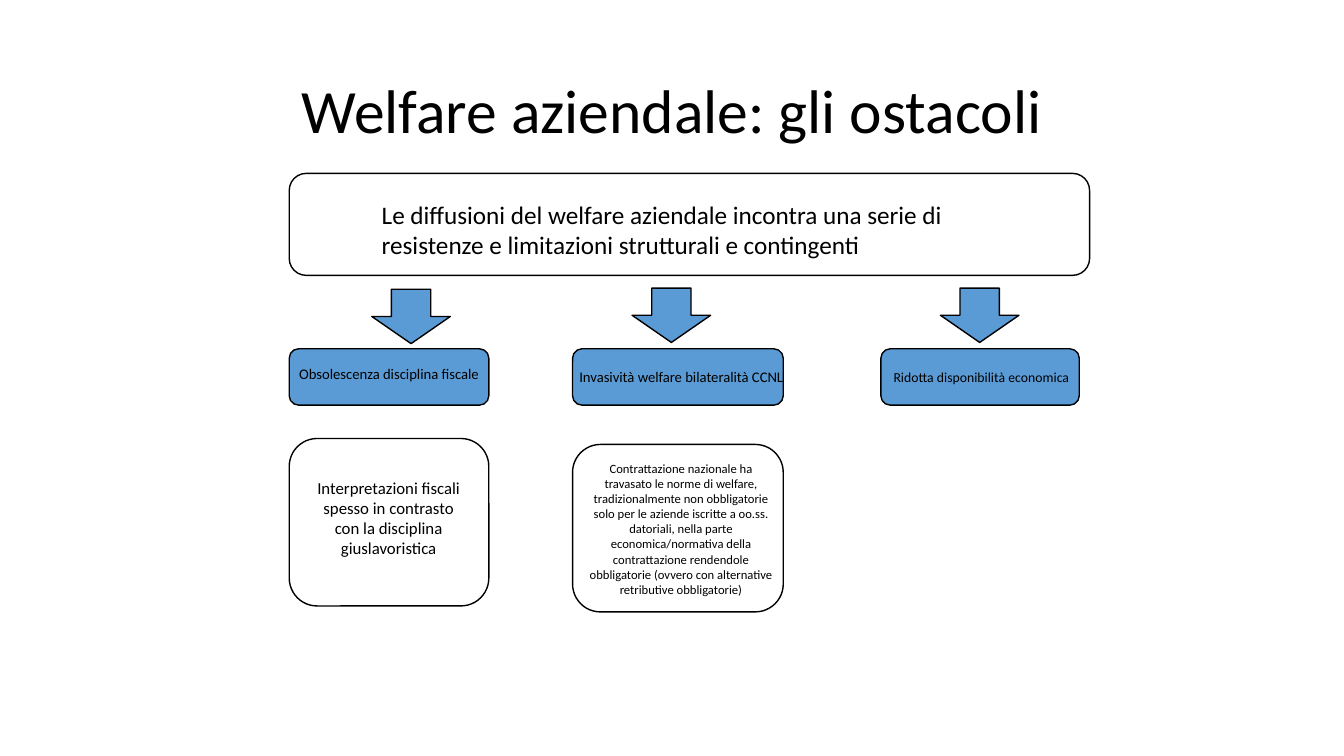
from dataclasses import dataclass

from pptx import Presentation
from pptx.dml.color import RGBColor
from pptx.enum.shapes import MSO_SHAPE
from pptx.enum.text import MSO_ANCHOR, MSO_AUTO_SIZE, PP_ALIGN
from pptx.util import Cm, Pt

# Content
TITLE = "Welfare aziendale: gli ostacoli"
INTRO = ("Le diffusioni del welfare aziendale incontra una serie di "
         "resistenze e limitazioni strutturali e contingenti")

# Obstacles: column and arrow geometry in cm; label and detail are
# (text, left, top, width, height, size), detail_top places the lower box
OBSTACLES = [
    dict(left=7.29, width=5.03, arrow_left=9.37, arrow_top=7.29, detail_top=11.05,
         label=("Obsolescenza disciplina fiscale", 7.29, 9.07, 5.13, 0.71, "label"),
         detail=("Interpretazioni fiscali spesso in contrasto con la disciplina "
                 "giuslavoristica", 7.7, 11.91, 4.19, 2.31, "detail")),
    dict(left=14.43, width=5.31, arrow_left=15.93, arrow_top=7.26, detail_top=11.2,
         label=("Invasività welfare bilateralità CCNL", 14.35, 9.14, 5.77, 0.71, "label"),
         detail=("Contrattazione nazionale ha travasato le norme di welfare, "
                 "tradizionalmente non obbligatorie solo per le aziende iscritte a "
                 "oo.ss. datoriali, nella parte economica/normativa della "
                 "contrattazione rendendole obbligatorie (ovvero con alternative "
                 "retributive obbligatorie)", 14.58, 11.48, 5.16, 3.71, "small")),
    dict(left=22.2, width=5.0, arrow_left=23.7, arrow_top=7.26,
         inner_label="Ridotta disponibilità economica"),
]

ARROW_WIDTH, ARROW_HEIGHT = 1.98, 1.37
LABEL_TOP, LABEL_HEIGHT, DETAIL_HEIGHT = 8.79, 1.42, 4.22


@dataclass(frozen=True)
class Theme:
    font = "Calibri"
    ink = RGBColor(0x00, 0x00, 0x00)
    accent = RGBColor(0x5B, 0x9B, 0xD5)
    line = Pt(1)
    sizes = {"title": 44, "intro": 18, "detail": 12, "label": 10.5,
             "inner": 9.8, "small": 9}


THEME = Theme()


def write(shape, text, size, align=PP_ALIGN.LEFT, anchor=MSO_ANCHOR.TOP, wrap=True):
    frame = shape.text_frame
    frame.text = text
    frame.word_wrap = wrap
    frame.vertical_anchor = anchor
    paragraph = frame.paragraphs[0]
    paragraph.alignment = align
    font = paragraph.runs[0].font
    font.name, font.size = THEME.font, Pt(THEME.sizes[size])
    font.color.rgb = THEME.ink
    return frame


def add_text(slide, text, left, top, width, height, size, **options):
    box = slide.shapes.add_textbox(Cm(left), Cm(top), Cm(width), Cm(height))
    frame = write(box, text, size, **options)
    frame.auto_size = MSO_AUTO_SIZE.SHAPE_TO_FIT_TEXT


def add_box(slide, kind, left, top, width, height, filled=True):
    shape = slide.shapes.add_shape(kind, Cm(left), Cm(top), Cm(width), Cm(height))
    shape.shadow.inherit = False
    shape.line.color.rgb, shape.line.width = THEME.ink, THEME.line
    if filled:
        shape.fill.solid()
        shape.fill.fore_color.rgb = THEME.accent
    else:
        shape.fill.background()
    return shape


def main():
    presentation = Presentation()
    presentation.slide_width, presentation.slide_height = Cm(33.87), Cm(19.05)
    slide = presentation.slides.add_slide(presentation.slide_layouts[6])

    # Title
    title = slide.shapes.add_textbox(Cm(2.33), Cm(1.01), Cm(29.21), Cm(3.68))
    frame = write(title, TITLE, "title", PP_ALIGN.CENTER, MSO_ANCHOR.MIDDLE)
    frame.paragraphs[0].line_spacing = 0.9

    # Introduction
    add_box(slide, MSO_SHAPE.ROUNDED_RECTANGLE, 7.29, 4.37, 20.17, 2.57, filled=False)
    add_text(slide, INTRO, 9.37, 4.9, 16.84, 1.8, "intro")

    # Obstacle columns: arrow, label and optional detail
    for obstacle in OBSTACLES:
        left, width = obstacle["left"], obstacle["width"]
        add_box(slide, MSO_SHAPE.DOWN_ARROW, obstacle["arrow_left"],
                obstacle["arrow_top"], ARROW_WIDTH, ARROW_HEIGHT)
        label_box = add_box(slide, MSO_SHAPE.ROUNDED_RECTANGLE,
                            left, LABEL_TOP, width, LABEL_HEIGHT)
        if "inner_label" in obstacle:
            write(label_box, obstacle["inner_label"], "inner",
                  anchor=MSO_ANCHOR.MIDDLE, wrap=False)
        else:
            add_text(slide, *obstacle["label"], wrap=False)
        if "detail" in obstacle:
            add_box(slide, MSO_SHAPE.ROUNDED_RECTANGLE, left, obstacle["detail_top"],
                    width, DETAIL_HEIGHT, filled=False)
            add_text(slide, *obstacle["detail"], align=PP_ALIGN.CENTER)

    presentation.save("out.pptx")


if __name__ == "__main__":
    main()
